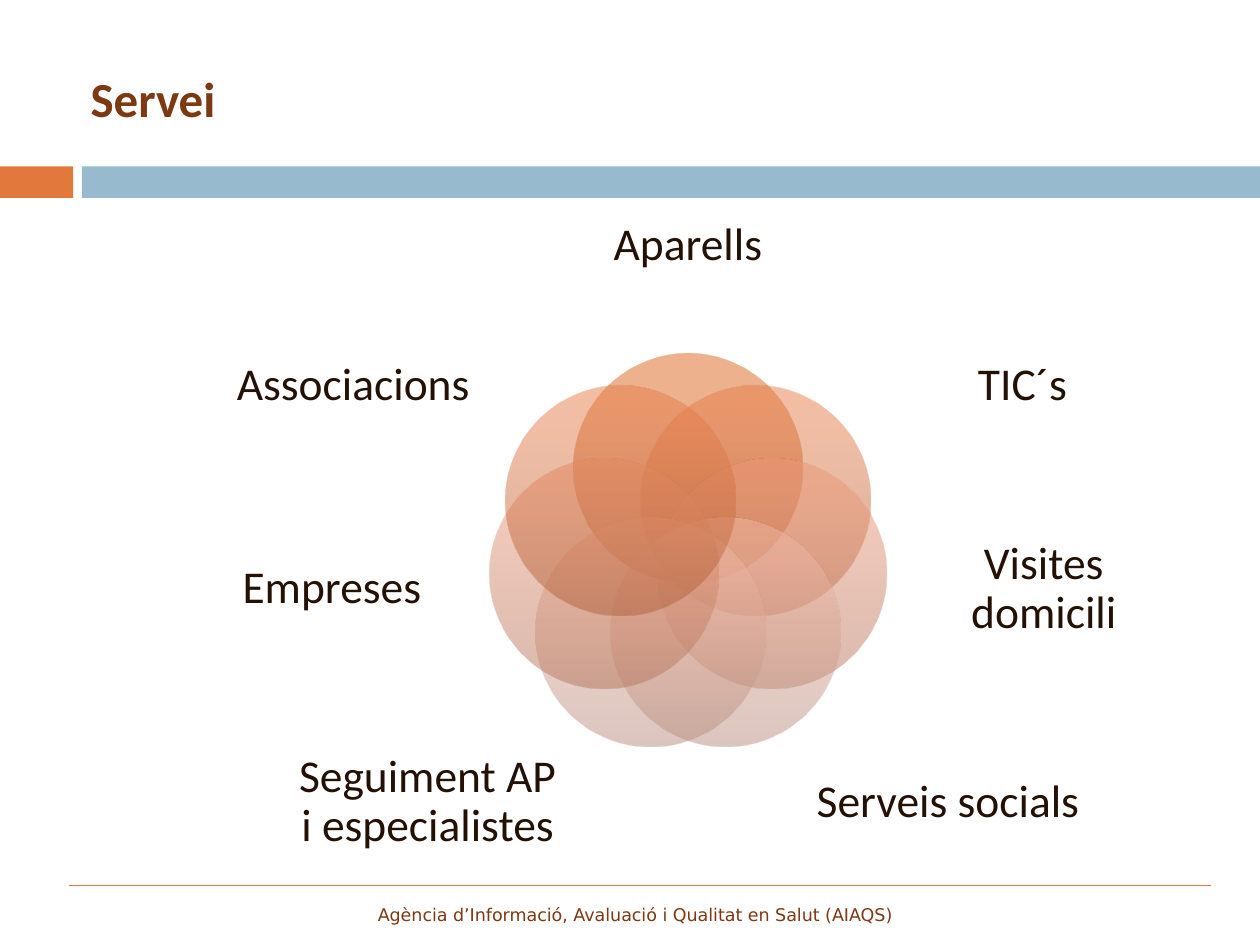
import math
import pptx
import pptx.util
import pptx.dml.color
import pptx.enum.shapes
import pptx.enum.text
import pptx.oxml
import lxml.etree

TITLE = "Servei"
FOOTER = "Agència d’Informació, Avaluació i Qualitat en Salut (AIAQS)"

PETALS = [
    ("Aparells", "top"),
    ("TIC´s", "upper"),
    ("Visites domicili", "middle"),
    ("Serveis socials", "lower"),
    ("Seguiment AP i especialistes", "lower"),
    ("Empreses", "middle"),
    ("Associacions", "upper"),
]

LABEL_ROWS = {
    "top": (0, 1.39, 2.09, 1.12),
    "upper": (2.655, 2.45, 1.97, 1.23),
    "middle": (2.825, 4.02, 1.93, 1.31),
    "lower": (2.065, 5.77, 2.09, 1.2),
}

THEME = {
    "orange": "E2783B",
    "blue": "97BACF",
    "brown": "7C3912",
    "dark": "231106",
    "heading": ("Calibri", 28),
    "label": ("Calibri", 26),
    "footer": ("DejaVu Sans", 10),
    "petals": {
        "top": ("AA4D17", "DD641E", "E1631A"),
        "upper": ("AF5F39", "E47C4A", "E87B47"),
        "middle": ("B4755C", "EA9877", "ED9775"),
        "lower": ("B88D7F", "EFB7A4", "F2B7A4"),
    },
}

WIDTH, HEIGHT = 10, 7.5
CENTER_X, CENTER_Y = 5.46, 4.4
RING_RADIUS = 0.684
DIAMETER = 1.82
STOPS = (0, 80, 100)
OPACITY = 50

inch = pptx.util.Inches
SHAPES = pptx.enum.shapes.MSO_SHAPE
ANCHOR = pptx.enum.text.MSO_ANCHOR
ALIGN = pptx.enum.text.PP_ALIGN


def color(name):
    return pptx.dml.color.RGBColor.from_string(THEME[name])


def add_text(shapes, text, area, style, tint, anchor, align, bold=None):
    box = shapes.add_textbox(*map(inch, area))
    frame = box.text_frame
    frame.word_wrap = True
    frame.vertical_anchor = anchor
    frame.text = text
    para = frame.paragraphs[0]
    para.alignment = align
    font = para.runs[0].font
    font.name, size = THEME[style]
    font.size = pptx.util.Pt(size)
    font.bold = bold
    font.color.rgb = color(tint)
    return frame


def add_plain(shapes, kind, area):
    shape = shapes.add_shape(kind, *map(inch, area))
    shape.shadow.inherit = False
    shape.line.fill.background()
    return shape


def add_bar(shapes, left, width, tint):
    bar = add_plain(shapes, SHAPES.RECTANGLE, (left, 1.32, width, 0.25))
    bar.fill.solid()
    bar.fill.fore_color.rgb = color(tint)


def add_rule(shapes, left, right, top):
    rule = shapes.add_connector(
        pptx.enum.shapes.MSO_CONNECTOR.STRAIGHT, *map(inch, (left, top, right, top))
    )
    rule.line.color.rgb = color("orange")
    rule.line.width = pptx.util.Pt(0.75)
    lxml.etree.SubElement(
        rule._element.spPr, pptx.oxml.ns.qn("a:effectLst")
    )


def add_petal(shapes, angle, row):
    left = CENTER_X + RING_RADIUS * math.sin(angle) - DIAMETER / 2
    top = CENTER_Y - RING_RADIUS * math.cos(angle) - DIAMETER / 2
    petal = add_plain(shapes, SHAPES.OVAL, (left, top, DIAMETER, DIAMETER))
    petal.fill.gradient()
    petal.fill.gradient_angle = 90
    stops = petal._element.spPr.find(".//" + pptx.oxml.ns.qn("a:gsLst"))
    for stop in list(stops):
        stops.remove(stop)
    for position, tint in zip(STOPS, THEME["petals"][row]):
        stops.append(pptx.oxml.parse_xml(
            f'<a:gs {pptx.oxml.ns.nsdecls("a")} pos="{position * 1000}">'
            f'<a:srgbClr val="{tint}"><a:alpha val="{OPACITY * 1000}"/></a:srgbClr></a:gs>'
        ))


def add_label(shapes, text, side, row):
    offset, top, width, height = LABEL_ROWS[row]
    area = (CENTER_X + side * offset - width / 2, top, width, height)
    frame = add_text(shapes, text, area, "label", "dark", ANCHOR.MIDDLE, ALIGN.CENTER)
    frame.margin_left = frame.margin_right = 0
    frame.margin_top = frame.margin_bottom = 0
    frame.paragraphs[0].line_spacing = 0.9


def main():
    deck = pptx.Presentation()
    deck.slide_width, deck.slide_height = inch(WIDTH), inch(HEIGHT)
    page = deck.slides.add_slide(deck.slide_layouts[6])
    shapes = page.shapes

    add_bar(shapes, 0, 0.58, "orange")
    add_bar(shapes, 0.65, WIDTH - 0.65, "blue")
    add_rule(shapes, 0.55, 9.61, 7.03)
    add_text(shapes, TITLE, (0.62, 0.31, 8.88, 0.94), "heading", "brown",
             ANCHOR.MIDDLE, ALIGN.LEFT, bold=True)
    add_text(shapes, FOOTER, (0.55, 7.03, 8.98, 0.36), "footer", "brown",
             ANCHOR.BOTTOM, ALIGN.CENTER)

    flower = shapes.add_group_shape().shapes
    for index, (text, row) in enumerate(PETALS):
        angle = math.tau * index / len(PETALS)
        add_petal(flower, angle, row)
        add_label(flower, text, math.copysign(1, math.sin(angle)), row)

    deck.save("out.pptx")


if __name__ == "__main__":
    main()
